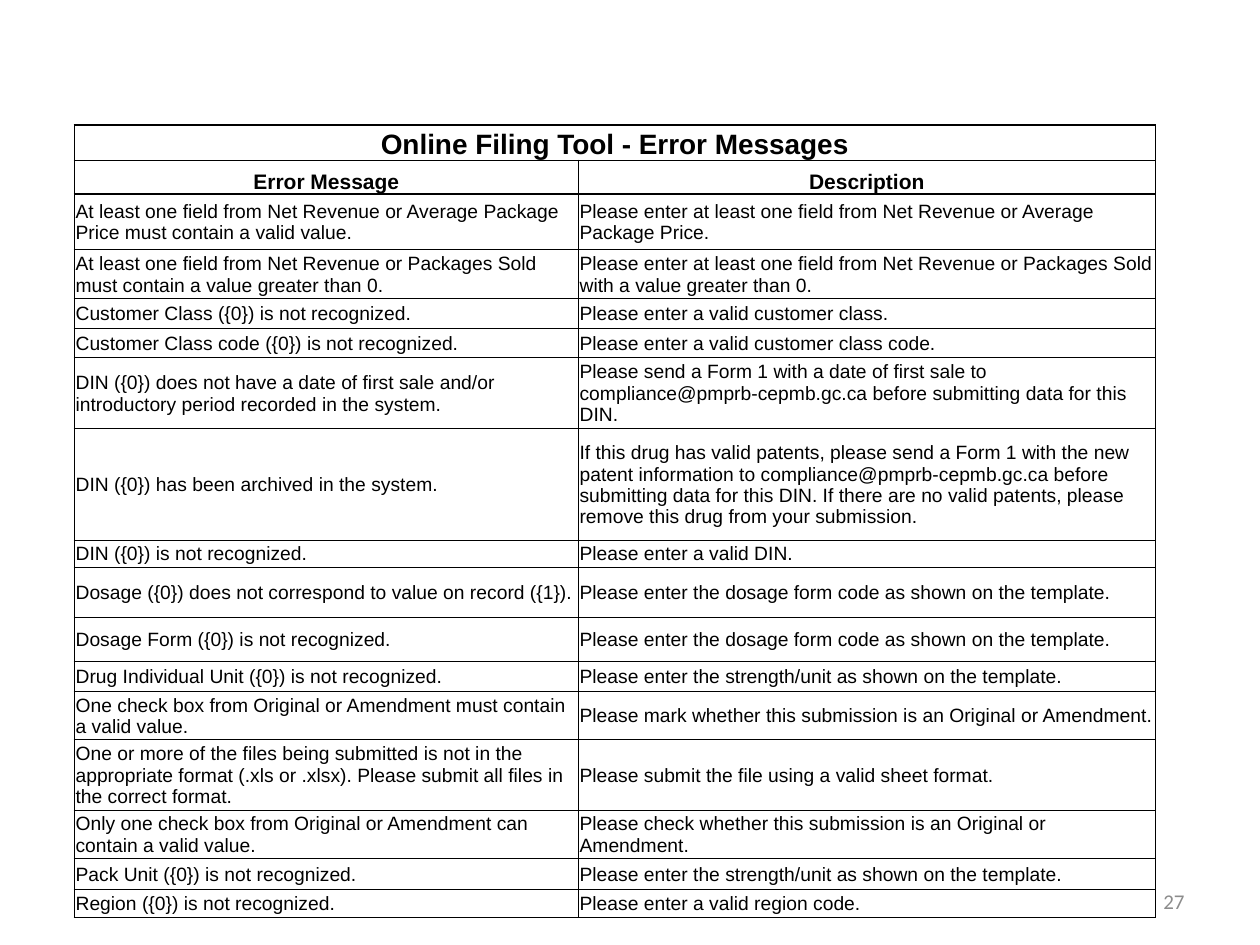
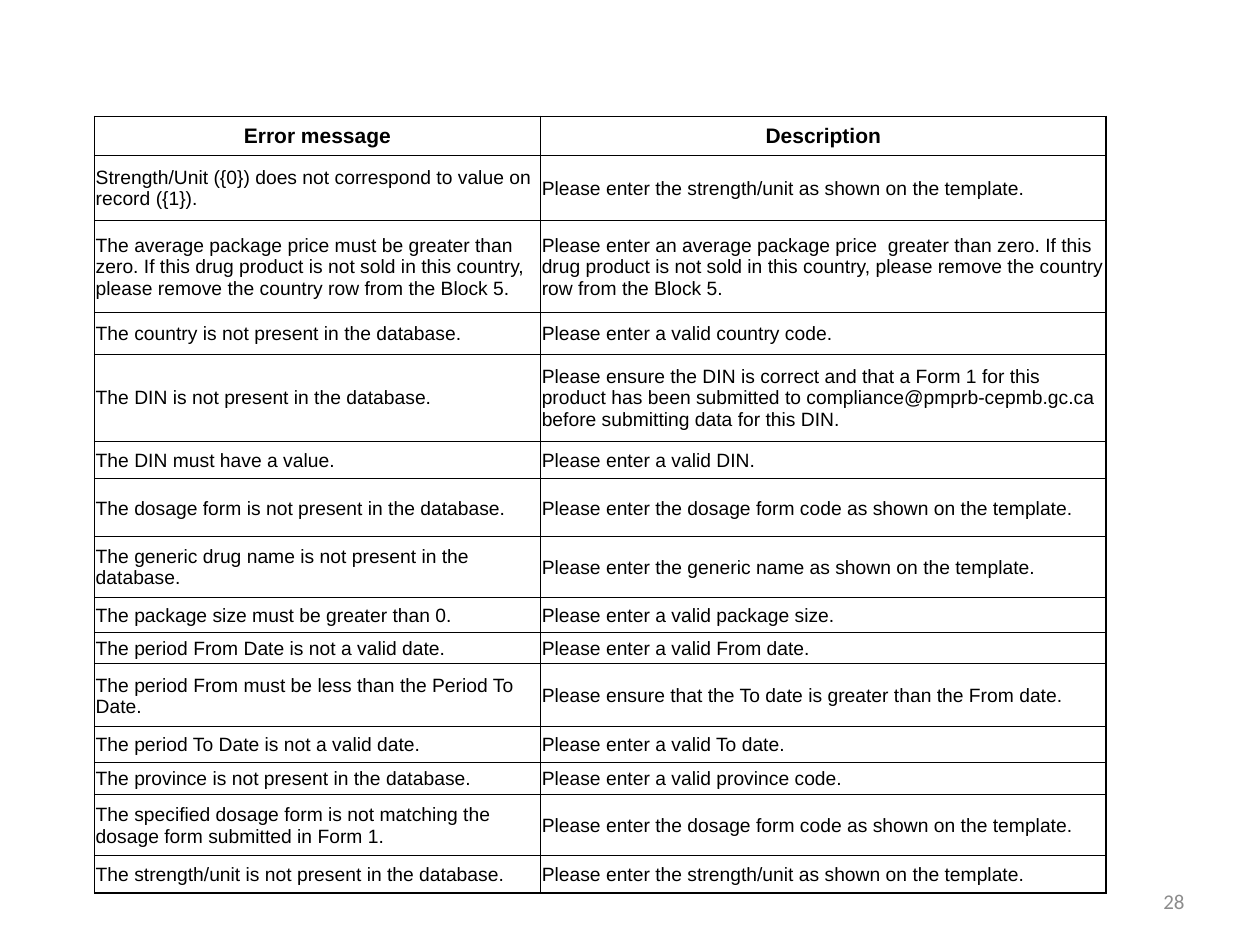
from dataclasses import dataclass

from lxml.etree import SubElement
from pptx import Presentation
from pptx.dml.color import RGBColor as Rgb
from pptx.enum.text import MSO_ANCHOR as Anchor, PP_ALIGN as Align
from pptx.oxml.ns import qn
from pptx.util import Inches, Pt

GRID_COLUMNS, GRID_ROWS = 100, 75


@dataclass(frozen=True)
class Theme:
    ink: str = "000000"
    paper: str = "FFFFFF"
    muted: str = "8C8C8C"
    table_font: str = "Arial"
    number_font: str = "Calibri"
    title_size: int = 16
    heading_size: int = 12
    body_size: int = 11
    number_size: int = 12
    thin: float = 0.5
    thick: float = 1


class Deck:
    """Holds the theme and the slide being built; lengths are grid units."""

    def __init__(self, theme):
        self.theme = theme
        self.file = Presentation()
        self.file.slide_width, self.file.slide_height = Inches(10), Inches(7.5)
        self.slide = None

    def x(self, columns):
        return round(self.file.slide_width * columns / GRID_COLUMNS)

    def y(self, rows):
        return round(self.file.slide_height * rows / GRID_ROWS)

    def new_slide(self):
        self.slide = self.file.slides.add_slide(self.file.slide_layouts[6])
        backdrop = self.slide.background.fill
        backdrop.solid()
        backdrop.fore_color.rgb = Rgb.from_string(self.theme.paper)

    def put_text(self, frame, text, align, color, **font_format):
        paragraph = frame.paragraphs[0]
        paragraph.alignment = align
        run = paragraph.add_run()
        run.text = text
        for name, value in font_format.items():
            setattr(run.font, name, value)
        run.font.color.rgb = Rgb.from_string(color)

    def page_number(self, number):
        footer = self.slide.shapes.add_textbox(
            self.x(71.7), self.y(69.5), self.x(23.3), self.y(4))
        frame = footer.text_frame
        frame.word_wrap = True
        frame.vertical_anchor = Anchor.MIDDLE
        self.put_text(frame, str(number), Align.RIGHT, self.theme.muted,
                      name=self.theme.number_font, size=Pt(self.theme.number_size))

    def borders(self, cell, top, bottom):
        thick = self.theme.thick
        widths = {"a:lnL": thick, "a:lnR": thick, "a:lnT": top, "a:lnB": bottom}
        properties = cell._tc.get_or_add_tcPr()
        for side, width in widths.items():
            line = SubElement(properties, qn(side), w=str(Pt(width)))
            fill = SubElement(line, qn("a:solidFill"))
            SubElement(fill, qn("a:srgbClr"), val=self.theme.ink)

    def cell(self, cell, text, size, heading, anchor):
        margin = Inches(0.01)
        layout = {"margin_left": margin, "margin_right": margin,
                  "margin_top": margin, "margin_bottom": 0,
                  "vertical_anchor": anchor}
        for name, value in layout.items():
            setattr(cell, name, value)
        cell.fill.background()
        if text:
            self.put_text(cell.text_frame, text,
                          Align.CENTER if heading else Align.LEFT, self.theme.ink,
                          name=self.theme.table_font, size=Pt(size), bold=heading)

    def message_table(self, left, top, widths, headings, messages,
                      heading_anchor, thick_edges, title=None):
        """Each row is (height, message, description); an optional title spans the top."""
        rows = ([title] if title else []) + [headings] + messages
        first_message = len(rows) - len(messages)
        table = self.slide.shapes.add_table(
            len(rows), len(widths), self.x(left), self.y(top),
            self.x(sum(widths)), self.y(sum(row[0] for row in rows))).table
        table.first_row = table.horz_banding = False
        for column, width in zip(table.columns, widths):
            column.width = self.x(width)
        if title:
            table.cell(0, 0).merge(table.cell(0, len(widths) - 1))

        theme = self.theme
        for index, (height, *texts) in enumerate(rows):
            table.rows[index].height = self.y(height)
            heading = index < first_message
            size = theme.heading_size if heading else theme.body_size
            if title and index == 0:
                size = theme.title_size
            above, below = (theme.thick if edge in thick_edges else theme.thin
                            for edge in (index, index + 1))
            for position, text in enumerate(texts):
                entry = table.cell(index, position)
                self.borders(entry, above, below)
                self.cell(entry, text, size, heading,
                          heading_anchor if heading else Anchor.MIDDLE)


# Descriptions used by several messages
ENTER_DOSAGE = "Please enter the dosage form code as shown on the template."
ENTER_STRENGTH = "Please enter the strength/unit as shown on the template."
ENTER_DIN = "Please enter a valid DIN."

FILING_ERRORS = [
    (4.4, "At least one field from Net Revenue or Average Package Price must contain a valid value.",
     "Please enter at least one field from Net Revenue or Average Package Price."),
    (3.9, "At least one field from Net Revenue or Packages Sold must contain a value greater than 0.",
     "Please enter at least one field from Net Revenue or Packages Sold with a value greater than 0."),
    (2.4, "Customer Class ({0}) is not recognized.", "Please enter a valid customer class."),
    (2.3, "Customer Class code ({0}) is not recognized.", "Please enter a valid customer class code."),
    (5.6, "DIN ({0}) does not have a date of first sale and/or introductory period recorded in the system.",
     "Please send a Form 1 with a date of first sale to compliance@pmprb-cepmb.gc.ca "
     "before submitting data for this DIN."),
    (8.9, "DIN ({0}) has been archived in the system.",
     "If this drug has valid patents, please send a Form 1 with the new patent information to "
     "compliance@pmprb-cepmb.gc.ca before submitting data for this DIN. If there are no valid "
     "patents, please remove this drug from your submission."),
    (2.1, "DIN ({0}) is not recognized.", ENTER_DIN),
    (4, "Dosage ({0}) does not correspond to value on record ({1}).", ENTER_DOSAGE),
    (3.5, "Dosage Form ({0}) is not recognized.", ENTER_DOSAGE),
    (2.4, "Drug Individual Unit ({0}) is not recognized.", ENTER_STRENGTH),
    (3.8, "One check box from Original or Amendment must contain a valid value.",
     "Please mark whether this submission is an Original or Amendment."),
    (5.6, "One or more of the files being submitted is not in the appropriate format "
     "(.xls or .xlsx). Please submit all files in the correct format.",
     "Please submit the file using a valid sheet format."),
    (3.8, "Only one check box from Original or Amendment can contain a valid value.",
     "Please check whether this submission is an Original or Amendment."),
    (2.5, "Pack Unit ({0}) is not recognized.", ENTER_STRENGTH),
    (2.2, "Region ({0}) is not recognized.", "Please enter a valid region code."),
]

DATABASE_ERRORS = [
    (5.2, "Strength/Unit ({0}) does not correspond to value on record ({1}).", ENTER_STRENGTH),
    (7.3, "The average package price must be greater than zero. If this drug product is not sold "
     "in this country, please remove the country row from the Block 5.",
     "Please enter an average package price  greater than zero. If this drug product is not sold "
     "in this country, please remove the country row from the Block 5."),
    (3.3, "The country is not present in the database.", "Please enter a valid country code."),
    (6.9, "The DIN is not present in the database.",
     "Please ensure the DIN is correct and that a Form 1 for this product has been submitted to "
     "compliance@pmprb-cepmb.gc.ca before submitting data for this DIN."),
    (3, "The DIN must have a value.", ENTER_DIN),
    (4.6, "The dosage form is not present in the database.", ENTER_DOSAGE),
    (4.8, "The generic drug name is not present in the database.",
     "Please enter the generic name as shown on the template."),
    (2.8, "The package size must be greater than 0.", "Please enter a valid package size."),
    (2.5, "The period From Date is not a valid date.", "Please enter a valid From date."),
    (5, "The period From must be less than the Period To Date.",
     "Please ensure that the To date is greater than the From date."),
    (2.8, "The period To Date is not a valid date.", "Please enter a valid To date."),
    (2.6, "The province is not present in the database.", "Please enter a valid province code."),
    (4.8, "The specified dosage form is not matching the dosage form submitted in Form 1.",
     ENTER_DOSAGE),
    (3, "The strength/unit is not present in the database.", ENTER_STRENGTH),
]


def main():
    deck = Deck(Theme())

    # Filing errors, under a title row
    deck.new_slide()
    deck.page_number(27)
    deck.message_table(5.9, 9.9, (40, 45.8), (2.7, "Error Message", "Description"),
                       FILING_ERRORS, Anchor.BOTTOM, thick_edges={0, 2},
                       title=(2.8, "Online Filing Tool - Error Messages", ""))

    # Database errors
    deck.new_slide()
    deck.page_number(28)
    deck.message_table(7.5, 9.2, (35.4, 44.9), (3.1, "Error message", "Description"),
                       DATABASE_ERRORS, Anchor.MIDDLE,
                       thick_edges={len(DATABASE_ERRORS) + 1})

    deck.file.save("out.pptx")


if __name__ == "__main__":
    main()
